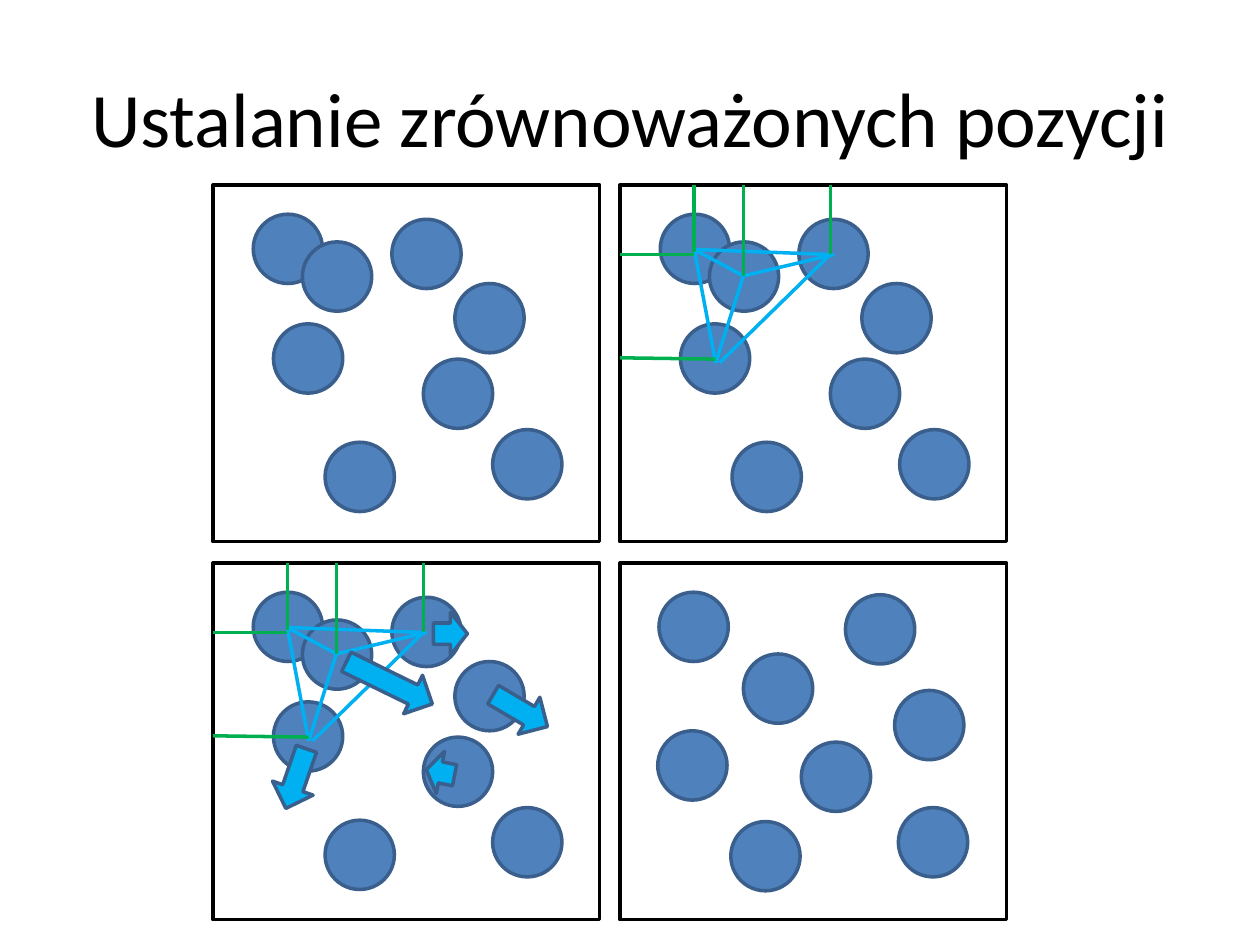
from typing import NamedTuple

from pptx import Presentation
from pptx.dml.color import RGBColor
from pptx.enum import shapes, text
from pptx.oxml.ns import qn
from pptx.util import Emu, Inches, Pt
from lxml import etree

BALL_BLUE = RGBColor(0x4F, 0x81, 0xBD)
EDGE_BLUE = RGBColor(0x3A, 0x5F, 0x8C)
SKY = RGBColor(0x00, 0xB0, 0xF0)
GREEN = RGBColor(0x00, 0xB0, 0x50)
BLACK = RGBColor(0x00, 0x00, 0x00)

SLIDE_WIDTH, SLIDE_HEIGHT = Inches(10), Inches(7.5)
CELL = SLIDE_WIDTH / 100
BALL_SIZE = 5.5
PANEL_WIDTH, PANEL_HEIGHT = 30.7, 28.3
FIRST_LEFT, FIRST_TOP = 16.9, 14.7
COLUMN_STEP, ROW_STEP = 32.3, 30
ARROW_HEIGHT = 3.4


class Point(NamedTuple):
    column: float
    row: float


class Link(NamedTuple):
    start: Point
    end: Point
    color: RGBColor


class Push(NamedTuple):
    corner: Point
    length: float
    angle: float


class Panel(NamedTuple):
    column: int
    row: int
    balls: list[Point]
    links: list[Link] = []
    pushes: list[Push] = []
    grouped: bool = True


CROWDED = [Point(3.2, 2.3), Point(4.8, 11), Point(7.1, 4.5), Point(14.2, 2.7),
           Point(16.7, 13.8), Point(19.2, 7.8), Point(8.9, 20.4), Point(22.2, 19.4)]
BALANCED = [Point(3.1, 2.3), Point(3, 13.3), Point(9.8, 7.2), Point(17.9, 2.5),
            Point(14.4, 14.2), Point(21.8, 10.1), Point(8.8, 20.5), Point(22.1, 19.4)]

UPPER_LEFT, MIDDLE = Point(5.9, 5.1), Point(9.8, 7.2)
LOWER, UPPER_RIGHT = Point(7.6, 14.1), Point(16.7, 5.5)
NEIGHBOUR_LINKS = [Link(start, end, SKY) for start, end in (
    (UPPER_LEFT, MIDDLE),
    (MIDDLE, LOWER),
    (MIDDLE, Point(17, 5.5)),
    (LOWER, UPPER_LEFT),
    (UPPER_LEFT, UPPER_RIGHT),
    (Point(7.9, 14.1), UPPER_RIGHT),
)]
WALL_LINKS = [Link(start, end, GREEN) for start, end in (
    (Point(5.9, 5.3), Point(5.9, 0)),
    (Point(0, 5.5), Point(5.9, 5.5)),
    (UPPER_RIGHT, Point(16.7, 0)),
    (MIDDLE, Point(9.8, 0)),
    (Point(7.6, 13.8), Point(0, 13.7)),
)]
LINKS = NEIGHBOUR_LINKS + WALL_LINKS
PUSHES = [
    Push(Point(4.1, 15.4), 5, 109),
    Push(Point(17.5, 3.9), 2.7, 0),
    Push(Point(21.9, 10), 5, 30.5),
    Push(Point(16.9, 14.9), 2.3, 191.2),
    Push(Point(10.2, 7.8), 7.6, 26.1),
]
PANELS = [
    Panel(0, 0, CROWDED),
    Panel(1, 0, CROWDED, LINKS),
    Panel(0, 1, CROWDED, LINKS, PUSHES, grouped=False),
    Panel(1, 1, BALANCED),
]


def cells(count: float) -> Emu:
    return Emu(round(count * CELL))


def write(frame, content: str, *, size: float, font: str, color: RGBColor) -> None:
    frame.word_wrap = True
    frame.vertical_anchor = text.MSO_ANCHOR.MIDDLE
    paragraph = frame.paragraphs[0]
    paragraph.alignment = text.PP_ALIGN.CENTER
    run = paragraph.add_run()
    run.text = content
    run.font.size, run.font.name = Pt(size), font
    run.font.color.rgb = color


def draw_outline(canvas, kind, origin: Point, corner: Point, width: float, height: float,
                 fill: RGBColor | None, edge: RGBColor, angle: float = 0) -> None:
    outline = canvas.add_shape(kind, cells(origin.column + corner.column),
                               cells(origin.row + corner.row), cells(width), cells(height))
    outline.shadow.inherit = False
    outline.rotation = angle
    if fill is None:
        outline.fill.background()
    else:
        outline.fill.solid()
        outline.fill.fore_color.rgb = fill
    outline.line.color.rgb = edge
    outline.line.width = Pt(2)


def draw_link(canvas, origin: Point, link: Link) -> None:
    ends = [cells(base + offset) for point in (link.start, link.end)
            for base, offset in zip(origin, point)]
    connector = canvas.add_connector(shapes.MSO_CONNECTOR.STRAIGHT, *ends)
    connector.line.color.rgb = link.color
    connector.line.width = Pt(2)
    etree.SubElement(connector._element.spPr, qn("a:effectLst"))


def draw_panel(slide, panel: Panel) -> None:
    canvas = slide.shapes.add_group_shape().shapes if panel.grouped else slide.shapes
    origin = Point(FIRST_LEFT + panel.column * COLUMN_STEP, FIRST_TOP + panel.row * ROW_STEP)
    kinds = shapes.MSO_SHAPE
    for ball in panel.balls:
        draw_outline(canvas, kinds.OVAL, origin, ball, BALL_SIZE, BALL_SIZE,
                     BALL_BLUE, EDGE_BLUE)
    draw_outline(canvas, kinds.RECTANGLE, origin, Point(0, 0), PANEL_WIDTH, PANEL_HEIGHT,
                 None, BLACK)
    for link in panel.links:
        draw_link(canvas, origin, link)
    for push in panel.pushes:
        draw_outline(canvas, kinds.RIGHT_ARROW, origin, push.corner, push.length,
                     ARROW_HEIGHT, SKY, EDGE_BLUE, push.angle)


def main() -> None:
    deck = Presentation()
    deck.slide_width, deck.slide_height = SLIDE_WIDTH, SLIDE_HEIGHT
    slide = deck.slides.add_slide(deck.slide_layouts[5])
    heading = slide.shapes.title
    heading.left, heading.top = cells(5), cells(3)
    heading.width, heading.height = cells(90), cells(12.5)
    write(heading.text_frame, "Ustalanie zrównoważonych pozycji",
          size=44, font="Calibri", color=BLACK)
    for panel in PANELS:
        draw_panel(slide, panel)
    deck.save("out.pptx")


if __name__ == "__main__":
    main()
